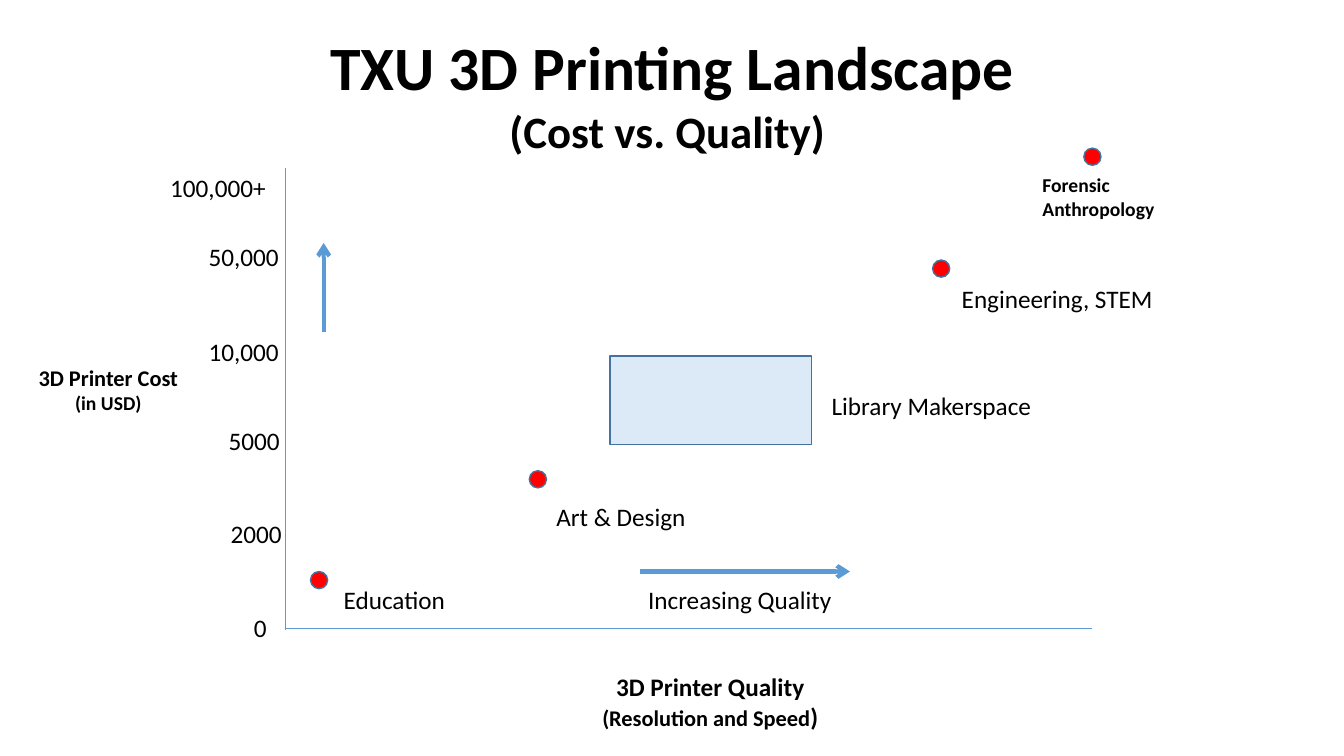
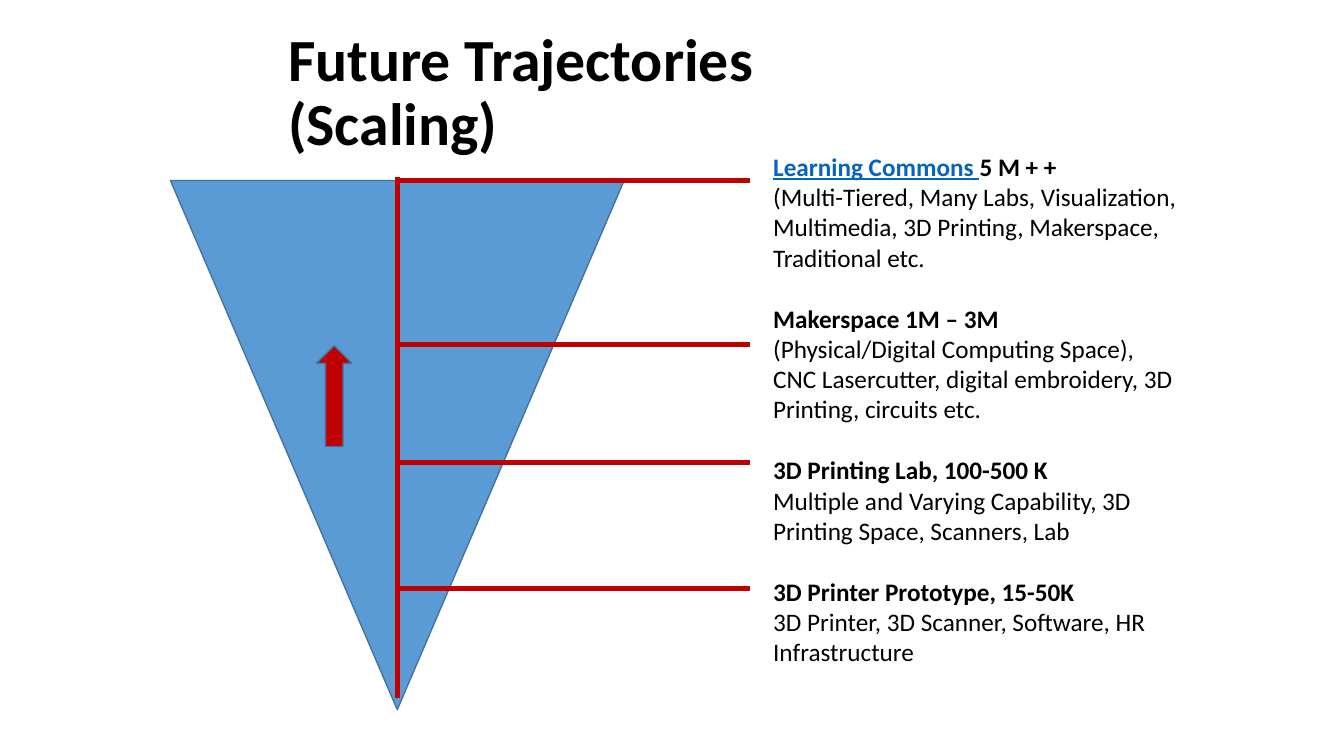
from lxml import etree
from pptx import Presentation
from pptx.dml.color import RGBColor
from pptx.enum import shapes, text
from pptx.oxml import ns
from pptx.util import Inches, Pt

FONT = "Calibri"
BLACK, BLUE, OUTLINE = "000000", "5B9BD5", "43739E"
RED, DARK_RED, LINK = "FF0000", "C00000", "0563C1"
LEFT, CENTER = text.PP_ALIGN.LEFT, text.PP_ALIGN.CENTER
SHAPE = shapes.MSO_SHAPE


def rgb(value):
    return RGBColor.from_string(value)


def add_text(slide, box, lines, align=LEFT, wrap=True, grow=True):
    """Write (text, size, bold) lines as paragraphs and return the text frame."""
    frame = slide.shapes.add_textbox(*map(Inches, box)).text_frame
    frame.word_wrap = wrap
    if grow:
        frame.auto_size = text.MSO_AUTO_SIZE.SHAPE_TO_FIT_TEXT
    for index, (words, size, bold) in enumerate(lines):
        paragraph = frame.paragraphs[0] if index == 0 else frame.add_paragraph()
        paragraph.add_run().text = words
        paragraph.alignment = align
        paragraph.font.name = FONT
        paragraph.font.size = Pt(size)
        paragraph.font.bold = bold
        paragraph.font.color.rgb = rgb(BLACK)
    return frame


def add_label(slide, left, top, width, words, wrap=False):
    add_text(slide, (left, top, width, 0.4), [(words, 18, False)], wrap=wrap)


def add_title(slide, box, lines, align=LEFT):
    frame = add_text(slide, box, [(words, size, True) for words, size in lines],
                     align, grow=False)
    frame.vertical_anchor = text.MSO_ANCHOR.MIDDLE
    return frame


def add_figure(slide, kind, box, color):
    figure = slide.shapes.add_shape(kind, *map(Inches, box))
    figure.shadow.inherit = False
    figure.fill.solid()
    figure.fill.fore_color.rgb = rgb(color)
    figure.line.color.rgb = rgb(OUTLINE)
    figure.line.width = Pt(1)
    return figure


def add_line(slide, start, end, color, width, arrow=False):
    line = slide.shapes.add_connector(
        shapes.MSO_CONNECTOR.STRAIGHT, *map(Inches, start + end))
    line.line.color.rgb = rgb(color)
    line.line.width = Pt(width)
    if arrow:
        tail = etree.SubElement(line.line._get_or_add_ln(), ns.qn("a:tailEnd"))
        tail.set("type", "arrow")
    etree.SubElement(line._element.spPr, ns.qn("a:effectLst"))


def add_axes(slide, left, top, width, height):
    bottom = top + height
    add_line(slide, (left, top), (left, bottom + 0.02), BLUE, 0.5)
    add_line(slide, (left, bottom), (left + width, bottom), BLUE, 0.5)

    ticks = [("100,000+", 1.24, -0.01), ("50,000", 0.86, 0.67),
             ("10,000", 0.86, 1.62), ("5000", 0.66, 2.5),
             ("2000", 0.64, 3.42), ("0", 0.41, 4.36)]
    for amount, indent, drop in ticks:
        add_label(slide, left - indent, top + drop, max(indent, 1), amount, True)

    add_text(slide, (left - 2.72, top + 1.89, 1.93, 0.61),
             [("3D Printer Cost", 16, True), ("(in USD)", 14, True)], CENTER)
    quality = add_text(
        slide, (left + 3.03, bottom + 0.38, 2.37, 0.71),
        [("3D Printer Quality", 18, True), ("(Resolution and Speed", 16, True)],
        CENTER, wrap=False)
    bracket = quality.paragraphs[1].add_run()
    bracket.text = ")"
    bracket.font.size = Pt(18)

    add_line(slide, (left + 0.38, top + 1.62), (left + 0.38, top + 0.74),
             BLUE, 3, arrow=True)
    add_line(slide, (left + 3.52, top + 4), (left + 5.6, top + 4),
             BLUE, 3, arrow=True)
    add_label(slide, left + 3.5, top + 4.08, 2.04, "Increasing Quality")


def add_printer_users(slide, left, top):
    """Place each group of printer users relative to the plot's top left."""
    makerspace = add_figure(slide, SHAPE.RECTANGLE,
                            (left + 3.22, top + 1.86, 2, 0.88), BLUE)
    tint = makerspace.fill._xPr.find(".//" + ns.qn("a:srgbClr"))
    etree.SubElement(tint, ns.qn("a:alpha")).set("val", "21000")
    add_label(slide, left + 5.32, top + 2.15, 2.2, "Library Makerspace")

    for x, y in [(0.25, 4), (2.42, 3), (6.42, 0.91), (7.92, -0.2)]:
        add_figure(slide, SHAPE.OVAL, (left + x, top + y, 0.17, 0.17), RED)
    for name, x, y, width in [("Education", 0.48, 4.08, 1.22),
                              ("Art & Design", 2.59, 3.25, 1.5),
                              ("Engineering, STEM", 6.61, 1.09, 2.12)]:
        add_label(slide, left + x, top + y, width, name)
    add_text(slide, (left + 7.41, top, 1.32, 0.57),
             [("Forensic", 14, True), ("Anthropology", 14, True)], wrap=False)


def add_scaling_funnel(slide, left, top, width, height):
    funnel = add_figure(slide, SHAPE.ISOSCELES_TRIANGLE,
                        (left, top, width, height), BLUE)
    funnel.rotation = 180
    middle = left + width / 2
    add_line(slide, (middle, top - 0.03), (middle, top + 5.13), DARK_RED, 3.75)
    for level in (0, 1.63, 2.8, 4.05):
        add_line(slide, (middle, top + level), (middle + 3.5, top + level),
                 DARK_RED, 3.75)
    add_figure(slide, SHAPE.UP_ARROW,
               (middle - 0.8, top + 1.64, 0.35, 1), DARK_RED)


def add_stages(slide, box):
    stages = [
        ("Learning Commons ",
         "(Multi-Tiered, Many Labs, Visualization, Multimedia, 3D Printing, "
         "Makerspace, Traditional etc."),
        ("Makerspace 1M – 3M",
         "(Physical/Digital Computing Space), CNC Lasercutter, "
         "digital embroidery, 3D Printing, circuits etc."),
        ("3D Printing Lab, 100-500 K",
         "Multiple and Varying Capability, 3D Printing Space, Scanners, Lab"),
        ("3D Printer Prototype, 15-50K",
         "3D Printer, 3D Scanner, Software, HR Infrastructure"),
    ]
    lines = []
    for heading, details in stages:
        lines += [(heading, 18, True), (details, 18, False)]
    paragraphs = add_text(slide, box, lines).paragraphs
    for heading in paragraphs[2::2]:
        heading.space_before = Pt(22)

    commons = paragraphs[0].runs[0]
    commons.font.color.rgb = rgb(LINK)
    commons.font.underline = True
    paragraphs[0].add_run().text = "5 M + +"


def build_landscape(slide):
    add_title(slide, (0.67, 0.3, 12, 1.25),
              [("TXU 3D Printing Landscape", 44), ("(Cost vs. Quality) ", 32)],
              CENTER)
    left, top = 2.83, 1.67
    add_axes(slide, left, top, 8, 4.56)
    add_printer_users(slide, left, top)


def build_trajectories(slide):
    title = add_title(slide, (2.76, 0.31, 6.88, 1.25),
                      [("Future Trajectories (Scaling)", 42.7)])
    title.paragraphs[0].line_spacing = 0.9
    add_scaling_funnel(slide, 1.69, 1.79, 4.5, 5.25)
    add_stages(slide, (7.57, 1.45, 4.25, 5.25))


def main():
    deck = Presentation()
    deck.slide_width, deck.slide_height = Inches(13.33), Inches(7.5)
    for build in (build_landscape, build_trajectories):
        build(deck.slides.add_slide(deck.slide_layouts[6]))
    deck.save("out.pptx")


if __name__ == "__main__":
    main()
